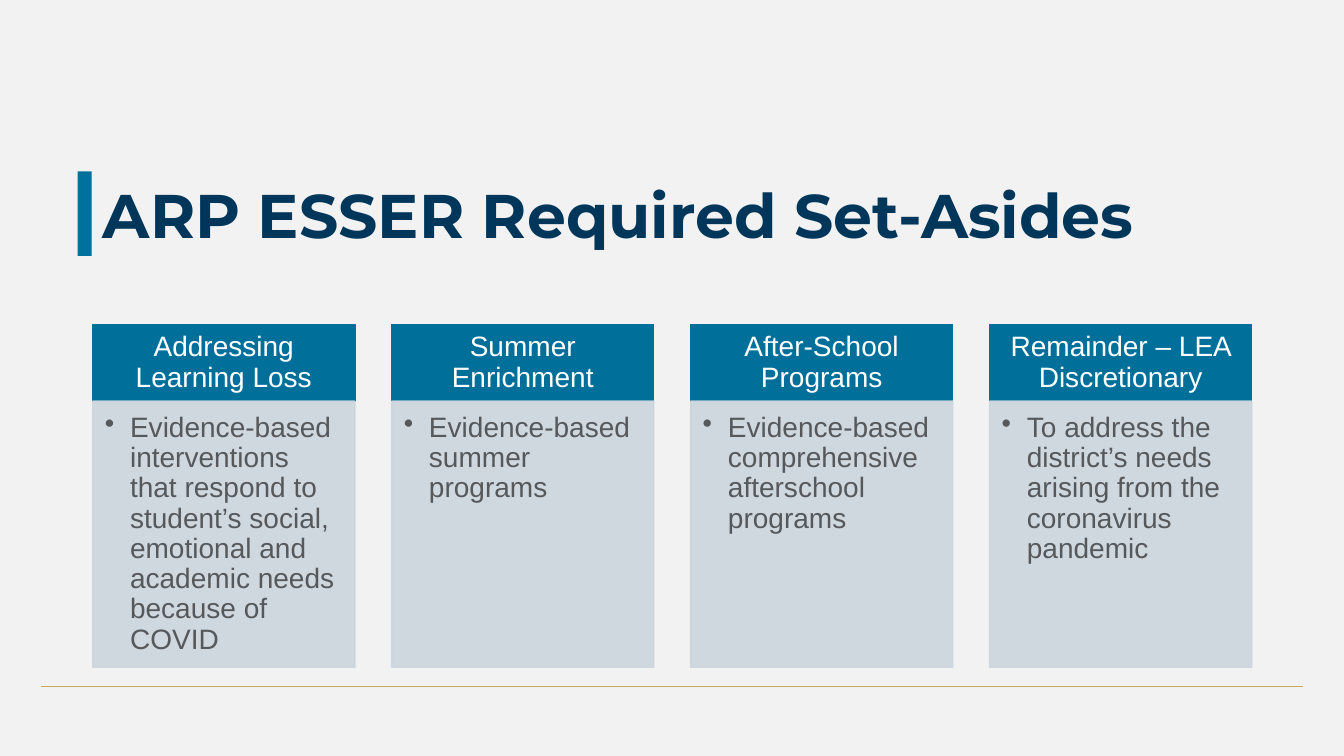
import pptx
import pptx.util
import pptx.dml.color
import pptx.enum.shapes
import pptx.enum.text
import pptx.oxml.ns
from lxml import etree

Inches = pptx.util.Inches
WIDTH, HEIGHT = 13.33, 7.5
COLORS = {
    "background": "F2F2F2", "navy": "00365A", "bar": "00719C", "header": "00709B",
    "panel": "CCD5DE", "body": "55595C", "white": "FFFFFF", "gold": "CAAB57",
}
SET_ASIDES = [
    ("Addressing Learning Loss",
     "Evidence-based interventions that respond to student’s social, "
     "emotional and academic needs because of COVID"),
    ("Summer Enrichment", "Evidence-based summer programs"),
    ("After-School Programs", "Evidence-based comprehensive afterschool programs"),
    ("Remainder – LEA Discretionary",
     "To address the district’s needs arising from the coronavirus pandemic"),
]
COLUMN_WIDTH, COLUMN_PITCH, HEADER_HEIGHT = 2.6, 2.965, 0.76
LEFT = pptx.enum.text.PP_ALIGN.LEFT
CENTER = pptx.enum.text.PP_ALIGN.CENTER
TOP = pptx.enum.text.MSO_ANCHOR.TOP
MIDDLE = pptx.enum.text.MSO_ANCHOR.MIDDLE


def rgb(name):
    """Return the named colour."""
    return pptx.dml.color.RGBColor.from_string(COLORS[name])


def add_child(parent, tag, **attributes):
    """Append a DrawingML element to its parent."""
    return etree.SubElement(parent, pptx.oxml.ns.qn(tag), attributes)


def write_text(shape, text, *, color, size=20, font="Arial", bold=False,
               align=LEFT, anchor=MIDDLE, insets=(0.1, 0.05, 0.1, 0.05), bullet=False):
    """Fill a shape with one formatted paragraph."""
    frame = shape.text_frame
    frame.word_wrap = True
    frame.auto_size = pptx.enum.text.MSO_AUTO_SIZE.NONE
    frame.vertical_anchor = anchor
    (frame.margin_left, frame.margin_top,
     frame.margin_right, frame.margin_bottom) = map(Inches, insets)
    para = frame.paragraphs[0]
    if bullet:
        properties = para._p.get_or_add_pPr()
        properties.set("marL", str(Inches(0.25)))
        properties.set("indent", str(-Inches(0.25)))
        add_child(properties, "a:buChar", char="•")
    para.alignment = align
    para.line_spacing = 0.9
    span = para.add_run()
    span.text = text
    span.font.name = font
    span.font.size = pptx.util.Pt(size)
    span.font.bold = bold
    span.font.color.rgb = rgb(color)


def add_box(page, box, color, outlined=True, opacity=100):
    """Draw a filled rectangle, with a matching outline if wanted."""
    shape = page.shapes.add_shape(
        pptx.enum.shapes.MSO_SHAPE.RECTANGLE, *map(Inches, box))
    shape.shadow.inherit = False
    shape.fill.solid()
    shape.fill.fore_color.rgb = rgb(color)
    if outlined:
        shape.line.color.rgb = rgb(color)
        shape.line.width = pptx.util.Pt(1)
    else:
        shape.line.fill.background()
    if opacity < 100:
        for value in shape._element.spPr.iter(pptx.oxml.ns.qn("a:srgbClr")):
            add_child(value, "a:alpha", val=str(opacity * 1000))
    return shape


def add_title(page, box, text):
    """Place the title and the accent bar at its left."""
    left, top, width, height = box
    title = page.shapes.title
    title.left, title.top, title.width, title.height = map(Inches, box)
    write_text(title, text, color="navy", size=44, font="Montserrat", bold=True)
    add_box(page, (left - 0.15, top + 0.26, 0.14, 0.84), "bar", outlined=False)


def add_column(page, box, heading, detail):
    """Place a heading block over a bulleted panel."""
    left, top, width, height = box
    header = add_box(page, (left, top, width, HEADER_HEIGHT), "header")
    write_text(header, heading, color="white", align=CENTER,
               insets=(0.16, 0.09, 0.16, 0.09))
    panel = add_box(page, (left, top + HEADER_HEIGHT, width, height - HEADER_HEIGHT),
                    "panel", opacity=90)
    write_text(panel, detail, color="body", anchor=TOP,
               insets=(0.12, 0.12, 0.16, 0.17), bullet=True)


def add_columns(page, box):
    """Spread the set-asides evenly across the box."""
    left, top, width, height = box
    for index, (heading, detail) in enumerate(SET_ASIDES):
        column = (left + index * COLUMN_PITCH, top, COLUMN_WIDTH, height)
        add_column(page, column, heading, detail)


def add_footer_rule(page, left, top, width):
    """Draw the thin line along the foot of the slide."""
    rule = page.shapes.add_connector(
        pptx.enum.shapes.MSO_CONNECTOR.STRAIGHT,
        *map(Inches, (left, top, left + width, top)))
    rule.line.color.rgb = rgb("gold")
    rule.line.width = pptx.util.Pt(1)
    add_child(rule._element.spPr, "a:effectLst")


def main():
    """Build and save the slide."""
    deck = pptx.Presentation()
    deck.slide_width, deck.slide_height = Inches(WIDTH), Inches(HEIGHT)
    page = deck.slides.add_slide(deck.slide_layouts.get_by_name("Title Only"))
    page.background.fill.solid()
    page.background.fill.fore_color.rgb = rgb("background")
    add_footer_rule(page, 0.41, 6.81, 12.51)
    add_title(page, (0.92, 1.44, 11.5, 1.45), "ARP ESSER Required Set-Asides")
    add_columns(page, (0.92, 3.22, 11.5, 3.4))
    deck.save("out.pptx")


if __name__ == "__main__":
    main()
